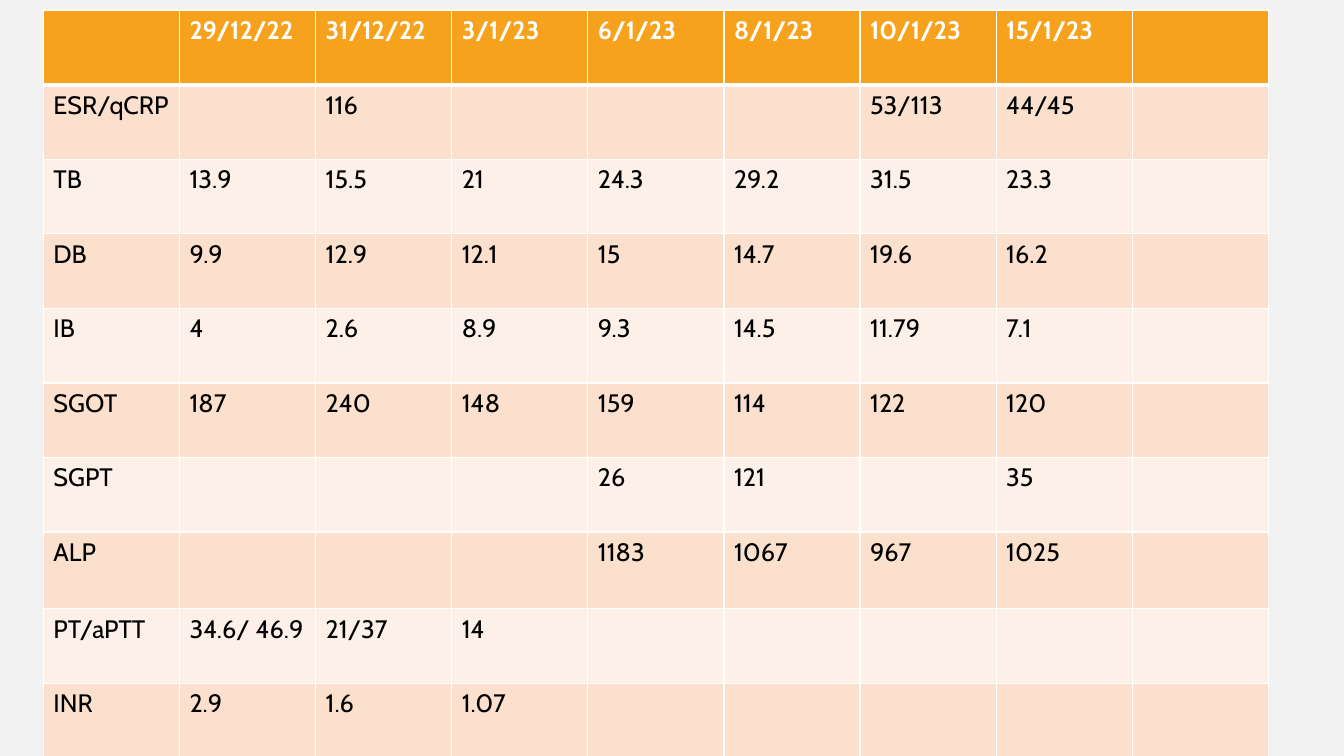
import dataclasses

import lxml.etree
import pptx
import pptx.dml.color
import pptx.oxml.ns
import pptx.util

Inches = pptx.util.Inches
RGB = pptx.dml.color.RGBColor.from_string


@dataclasses.dataclass
class Theme:
    back: str = "F2F2F2"
    head: str = "F6A21D"
    odd: str = "FBE0CD"
    even: str = "FDF0E8"
    white: str = "FFFFFF"
    ink: str = "000000"
    font: str = "Cabin"
    size: int = 18


theme = Theme()


def edge(cell, side, width):
    """Draw one white border of a cell."""
    props = cell._tc.get_or_add_tcPr()
    line = lxml.etree.SubElement(props, pptx.oxml.ns.qn("a:ln" + side))
    line.set("w", str(pptx.util.Pt(width)))
    fill = lxml.etree.SubElement(line, pptx.oxml.ns.qn("a:solidFill"))
    color = lxml.etree.SubElement(fill, pptx.oxml.ns.qn("a:srgbClr"))
    color.set("val", theme.white)


# Lab results by date
labs = [
    ["", "29/12/22", "31/12/22", "3/1/23", "6/1/23", "8/1/23", "10/1/23", "15/1/23", ""],
    ["ESR/qCRP", "", "116", "", "", "", "53/113", "44/45", ""],
    ["TB", "13.9", "15.5", "21", "24.3", "29.2", "31.5", "23.3", ""],
    ["DB", "9.9", "12.9", "12.1", "15", "14.7", "19.6", "16.2", ""],
    ["IB", "4", "2.6", "8.9", "9.3", "14.5", "11.79", "7.1", ""],
    ["SGOT", "187", "240", "148", "159", "114", "122", "120", ""],
    ["SGPT", "", "", "", "26", "121", "", "35", ""],
    ["ALP", "", "", "", "1183", "1067", "967", "1025", ""],
    ["PT/aPTT", "34.6/ 46.9", "21/37", "14", "", "", "", "", ""],
    ["INR", "2.9", "1.6", "1.07", "", "", "", "", ""],
]

# Slide
deck = pptx.Presentation()
deck.slide_width = Inches(13.33)
deck.slide_height = Inches(7.5)
slide = deck.slides.add_slide(deck.slide_layouts[6])
slide.background.fill.solid()
slide.background.fill.fore_color.rgb = RGB(theme.back)

# Table grid
frame = slide.shapes.add_table(
    len(labs), len(labs[0]), Inches(0.43), Inches(0.1), Inches(12.15), Inches(7.4))
table = frame.table
for col in table.columns:
    col.width = Inches(1.35)
for row in table.rows:
    row.height = Inches(0.74)
table.rows[7].height = Inches(0.76)

# Cells: borders come before the fill in the cell properties
for r, tests in enumerate(labs):
    top = r == 0
    shade = theme.head if top else theme.odd if r % 2 else theme.even
    for c, text in enumerate(tests):
        cell = table.cell(r, c)
        edge(cell, "L", 1)
        edge(cell, "R", 1)
        edge(cell, "T", 3 if r == 1 else 1)
        edge(cell, "B", 3 if top else 1)
        cell.fill.solid()
        cell.fill.fore_color.rgb = RGB(shade)
        if text:
            cell.text_frame.text = text
            font = cell.text_frame.paragraphs[0].runs[0].font
            font.name = theme.font
            font.size = pptx.util.Pt(theme.size)
            font.bold = top
            font.color.rgb = RGB(theme.white if top else theme.ink)

deck.save("out.pptx")
